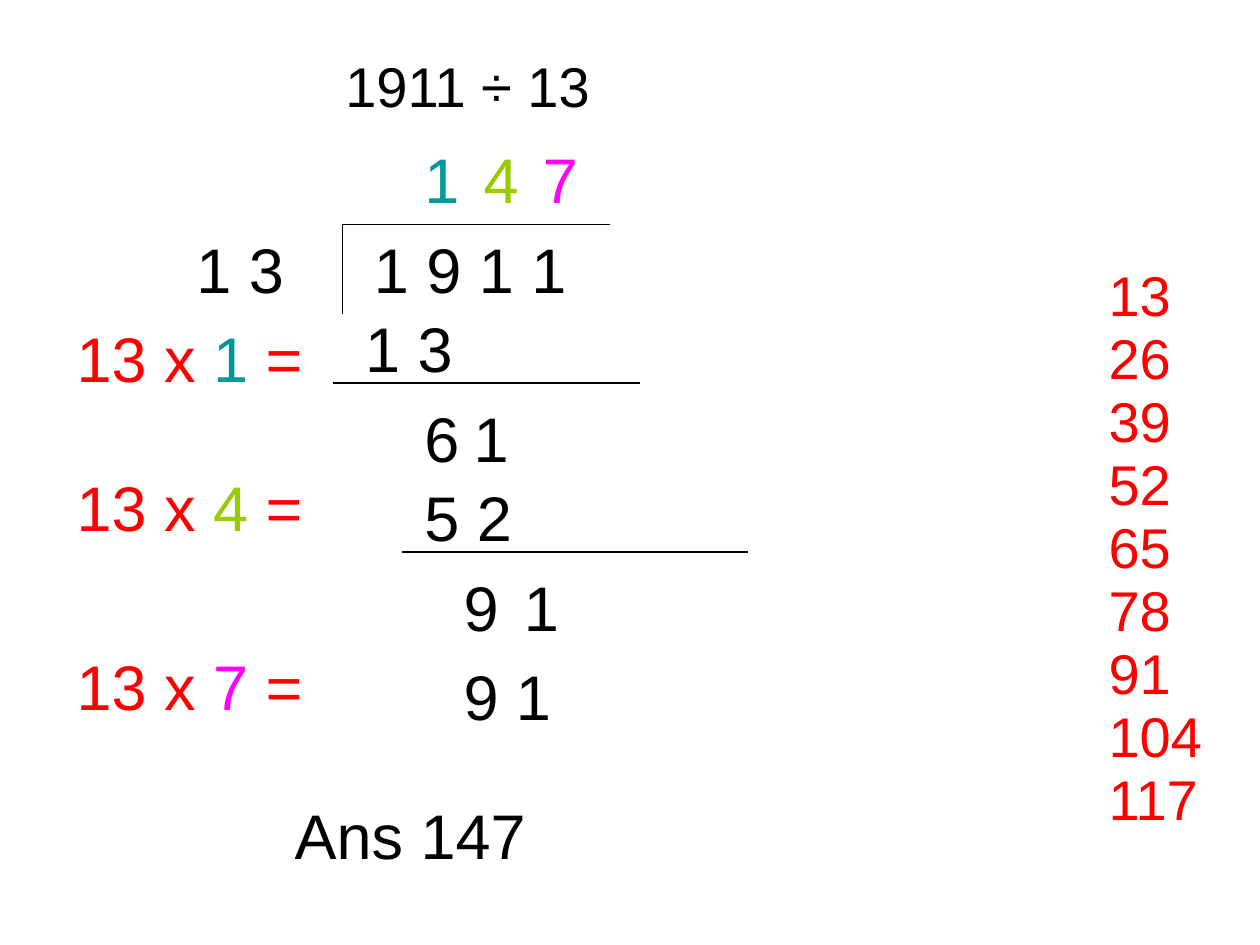
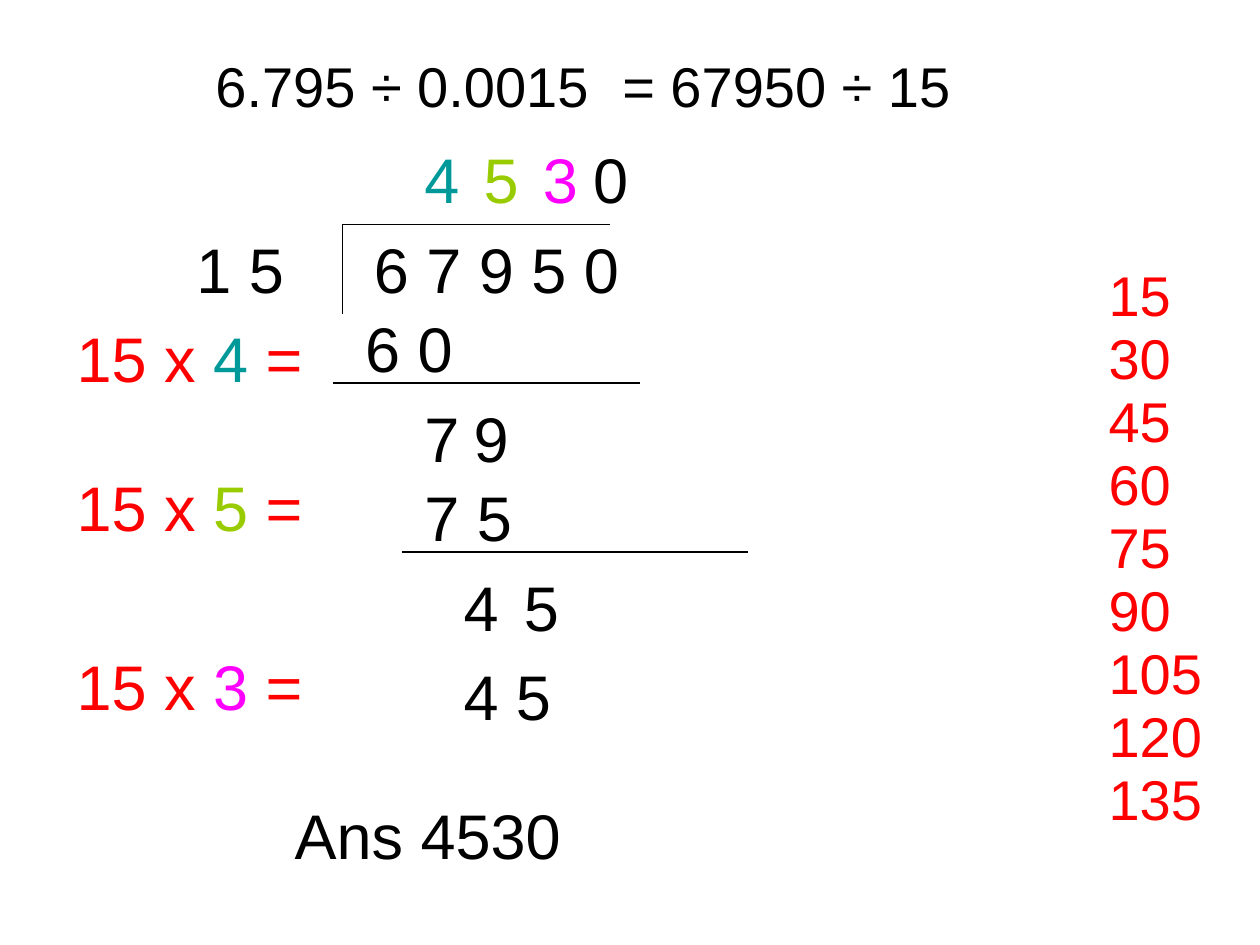
from lxml.etree import SubElement
from pptx import Presentation
from pptx.dml.color import RGBColor
from pptx.enum.shapes import MSO_CONNECTOR as CONN
from pptx.enum.text import MSO_ANCHOR as ANCHOR, MSO_AUTO_SIZE as AUTO, PP_ALIGN as ALIGN
from pptx.oxml.ns import qn
from pptx.util import Pt

DIVISIONS = [
    {"titles": [("1911 ÷ 13", 190.1, 169.9)],
     "dividend": 1911, "divisor": 13, "quotient": 147,
     "remainders": ["61", "91"], "dividend_width": 136.1},
    {"titles": [("6.795 ÷ 0.0015", 115.9, 254.9), ("= 67950 ÷ 15", 348.5, 226.8)],
     "dividend": 67950, "divisor": 15, "quotient": 4530,
     "remainders": ["79", "45"], "dividend_width": 175.7},
]
BLACK, RED = "000000", "FF0000"
DIGIT_COLORS = ["009999", "99CC00", "FF00FF", BLACK]
QUOTIENT_LEFTS = [235.4, 269.3, 303.1, 331.9]
LABEL_TOPS = [179.3, 264.2, 366.5]
PRODUCT_BOXES = [(201.6, 173.5, 136.1), (235.4, 270, 136.1), (257.8, 372.2, 64.8)]
REMAINDER_SPOTS = [(235.4, 263.5, 224.6), (257.8, 292.3, 321.1)]
RULES = [(195.8, 179.3, 195.8, 128.2), (195.8, 128.2, 348.5, 128.2),
         (190.1, 218.9, 365.8, 218.9), (229.7, 315.4, 427.7, 315.4)]
TITLE_TOP, TITLE_HEIGHT, TITLE_SIZE = 25.9, 45.4, 32
ROW_HEIGHT, DIGIT_WIDTH, WORK_WIDTH, NOWRAP_LIMIT = 50.4, 34.6, 136.1, 65


def color(value):
    return RGBColor.from_string(value)


def spaced(number):
    return " ".join(str(number))


def put_text(sp, box, paragraphs, size=36, **spacing):
    sp.left, sp.top, sp.width, sp.height = map(Pt, box)
    tf = sp.text_frame
    frame_format = {"word_wrap": box[2] > NOWRAP_LIMIT, "auto_size": AUTO.SHAPE_TO_FIT_TEXT,
                    "vertical_anchor": ANCHOR.TOP}
    for name, value in frame_format.items():
        setattr(tf, name, value)
    for i, runs in enumerate(paragraphs):
        p = tf.add_paragraph() if i else tf.paragraphs[0]
        for name, value in {"alignment": ALIGN.LEFT, **spacing}.items():
            setattr(p, name, value)
        for text, fill in runs:
            r = p.add_run()
            r.text = text
            for name, value in {"name": "Arial", "size": Pt(size)}.items():
                setattr(r.font, name, value)
            r.font.color.rgb = color(fill)


def add_text(s, box, paragraphs, size=36, **spacing):
    put_text(s.shapes.add_textbox(0, 0, 0, 0), box, paragraphs, size, **spacing)


def add_work(s, text, left, top, width=WORK_WIDTH, fill=BLACK):
    add_text(s, (left, top, width, ROW_HEIGHT), [[(text, fill)]])


def add_rule(s, ends):
    line = s.shapes.add_connector(CONN.STRAIGHT, *map(Pt, ends))
    line.line.color.rgb = color(BLACK)
    line.line.width = Pt(0.75)
    SubElement(line._element.spPr, qn("a:effectLst"))


def add_division(prs, titles, dividend, divisor, quotient, remainders, dividend_width):
    s = prs.slides.add_slide(prs.slide_layouts[5])
    for i, (text, left, width) in enumerate(titles):
        sp = s.shapes.add_textbox(0, 0, 0, 0) if i else s.shapes.title
        put_text(sp, (left, TITLE_TOP, width, TITLE_HEIGHT), [[(text, BLACK)]], TITLE_SIZE)

    multiples = [[(str(divisor * n), RED)] for n in range(1, 10)]
    add_text(s, (626.4, 162, 73.4, 334.8), multiples, 32,
             line_spacing=0.5, space_before=Pt(16.8))

    add_work(s, spaced(dividend), 206.6, 128.2, dividend_width)
    add_work(s, spaced(divisor), 105.1, 128.2, 73.4)
    for ends in RULES:
        add_rule(s, ends)

    digits = str(quotient)
    for digit, left, fill in zip(digits, QUOTIENT_LEFTS, DIGIT_COLORS):
        add_work(s, digit, left, 77, DIGIT_WIDTH, fill)
    for digit, fill, top, box in zip(digits, DIGIT_COLORS, LABEL_TOPS, PRODUCT_BOXES):
        label = [(f"{divisor} x ", RED), (digit, fill), (" =", RED)]
        add_text(s, (36.7, top, 164.2, ROW_HEIGHT), [label])
        add_work(s, spaced(divisor * int(digit)), *box)
    for (rest, brought_down), (left, next_left, top) in zip(remainders, REMAINDER_SPOTS):
        add_work(s, rest, left, top)
        add_work(s, brought_down, next_left, top, DIGIT_WIDTH)

    add_work(s, f"Ans {quotient}", 161.3, 451.4, 181.4)


def main():
    prs = Presentation()
    prs.slide_width, prs.slide_height = Pt(720), Pt(540)
    for division in DIVISIONS:
        add_division(prs, **division)
    prs.save("out.pptx")


if __name__ == "__main__":
    main()
